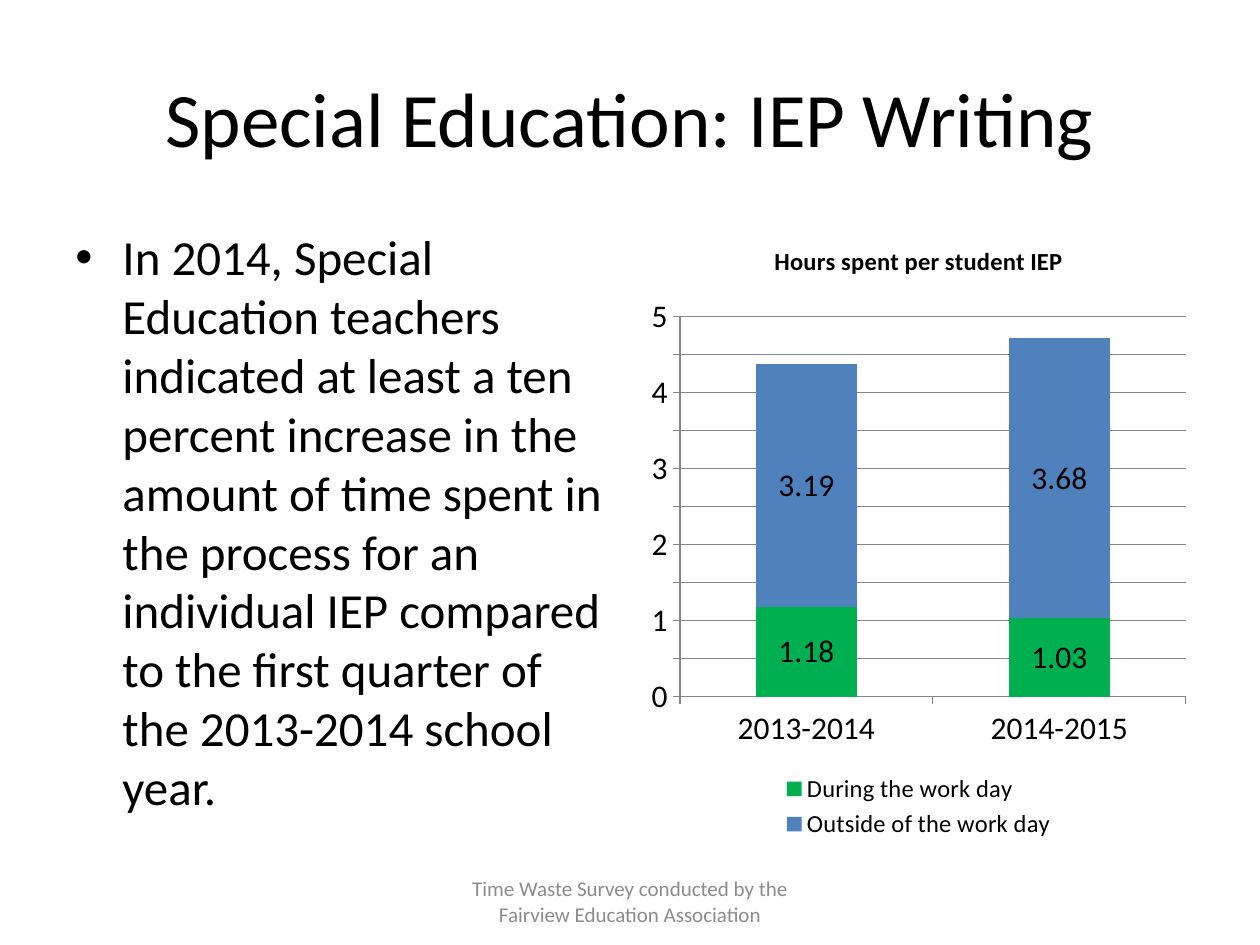
from lxml.etree import SubElement
from pptx import Presentation
from pptx.chart.data import CategoryChartData
from pptx.dml.color import RGBColor
from pptx.enum.chart import XL_CHART_TYPE as ChartType
from pptx.enum.chart import XL_LEGEND_POSITION as LegendPosition
from pptx.enum.chart import XL_TICK_MARK as TickMark
from pptx.enum.text import MSO_ANCHOR as Anchor
from pptx.enum.text import PP_ALIGN as Align
from pptx.oxml.ns import qn
from pptx.util import Cm, Pt

# Content
TITLE = "Special Education: IEP Writing"
BODY = (
    "In 2014, Special Education teachers indicated at least a ten percent "
    "increase in the amount of time spent in the process for an individual IEP "
    "compared to the first quarter of the 2013-2014 school year."
)
FOOTER = "Time Waste Survey conducted by the Fairview Education Association"
CHART_TITLE = "Hours spent per student IEP"
YEARS = ["2013-2014", "2014-2015"]

BLACK = RGBColor(0x00, 0x00, 0x00)
GRAY = RGBColor(0x8C, 0x8C, 0x8C)
AXIS_GRAY = RGBColor(0x86, 0x86, 0x86)
GREEN = RGBColor(0x00, 0xB0, 0x50)
BLUE = RGBColor(0x4F, 0x81, 0xBD)
FONT = "Calibri"

SERIES = [
    ("During the work day", [1.18, 1.03], GREEN),
    ("Outside of the work day", [3.19, 3.68], BLUE),
]

# Layout: two equal columns between the side margins
SLIDE_WIDTH, SLIDE_HEIGHT = Cm(25.4), Cm(19.05)
MARGIN, GUTTER = Cm(1.27), Cm(0.42)
CONTENT_WIDTH = SLIDE_WIDTH - 2 * MARGIN
COLUMN_WIDTH = (CONTENT_WIDTH - GUTTER) // 2
COLUMN_TOP, COLUMN_HEIGHT = Cm(4.45), Cm(12.57)
CHART_LEFT = MARGIN + COLUMN_WIDTH + GUTTER
FOOTER_WIDTH = Cm(8.04)


def style_font(font, size, color=BLACK, bold=False):
    font.name, font.size, font.bold = FONT, Pt(size), bold
    font.color.rgb = color


def write(frame, text, size, color=BLACK, align=Align.LEFT, anchor=Anchor.TOP):
    frame.word_wrap = True
    frame.vertical_anchor = anchor
    paragraph = frame.paragraphs[0]
    paragraph.alignment = align
    run = paragraph.add_run()
    run.text = text
    style_font(run.font, size, color)
    return paragraph


def add_bullet(paragraph, indent):
    properties = paragraph._p.get_or_add_pPr()
    properties.set("marL", str(indent))
    properties.set("indent", str(-indent))
    SubElement(properties, qn("a:buFont"), typeface="Arial")
    SubElement(properties, qn("a:buChar"), char="•")


def add_hours_chart(slide):
    data = CategoryChartData()
    data.categories = YEARS
    for name, values, _ in SERIES:
        data.add_series(name, values)
    chart = slide.shapes.add_chart(
        ChartType.COLUMN_STACKED, CHART_LEFT, COLUMN_TOP,
        COLUMN_WIDTH, COLUMN_HEIGHT, data,
    ).chart
    style_font(chart.font, 18)

    # Title and legend
    chart.has_title = True
    run = chart.chart_title.text_frame.paragraphs[0].add_run()
    run.text = CHART_TITLE
    style_font(run.font, 14, bold=True)
    chart.has_legend = True
    chart.legend.position = LegendPosition.BOTTOM
    chart.legend.include_in_layout = False
    style_font(chart.legend.font, 14)

    # Axes
    value_axis = chart.value_axis
    value_axis.minimum_scale, value_axis.maximum_scale = 0, 5
    value_axis.major_unit = 0.5
    value_axis.has_major_gridlines = True
    value_axis.major_gridlines.format.line.color.rgb = AXIS_GRAY
    for axis in (chart.category_axis, value_axis):
        axis.major_tick_mark = TickMark.OUTSIDE
        axis.format.line.color.rgb = AXIS_GRAY
        axis.tick_labels.number_format = "General"
        axis.tick_labels.number_format_is_linked = False

    # Columns
    plot = chart.plots[0]
    plot.gap_width, plot.overlap = 150, 100
    plot.vary_by_categories = False
    for series, (_, _, color) in zip(plot.series, SERIES):
        series.format.fill.solid()
        series.format.fill.fore_color.rgb = color
        series.data_labels.show_value = True
        style_font(series.data_labels.font, 18)


def main():
    presentation = Presentation()
    presentation.slide_width = SLIDE_WIDTH
    presentation.slide_height = SLIDE_HEIGHT
    slide = presentation.slides.add_slide(presentation.slide_layouts[5])

    # Title
    title = slide.shapes.title
    title.left, title.top = MARGIN, Cm(0.76)
    title.width, title.height = CONTENT_WIDTH, Cm(3.18)
    write(title.text_frame, TITLE, 44, align=Align.CENTER, anchor=Anchor.MIDDLE)

    # Finding
    body = slide.shapes.add_textbox(MARGIN, COLUMN_TOP, COLUMN_WIDTH, COLUMN_HEIGHT)
    paragraph = write(body.text_frame, BODY, 28)
    paragraph.space_before = Pt(5.6)
    add_bullet(paragraph, Cm(0.95))

    add_hours_chart(slide)

    # Footer
    footer = slide.shapes.add_textbox(
        (SLIDE_WIDTH - FOOTER_WIDTH) // 2, Cm(17.66), FOOTER_WIDTH, Cm(1.01)
    )
    write(footer.text_frame, FOOTER, 12, GRAY, Align.CENTER, Anchor.MIDDLE)

    presentation.save("out.pptx")


if __name__ == "__main__":
    main()
